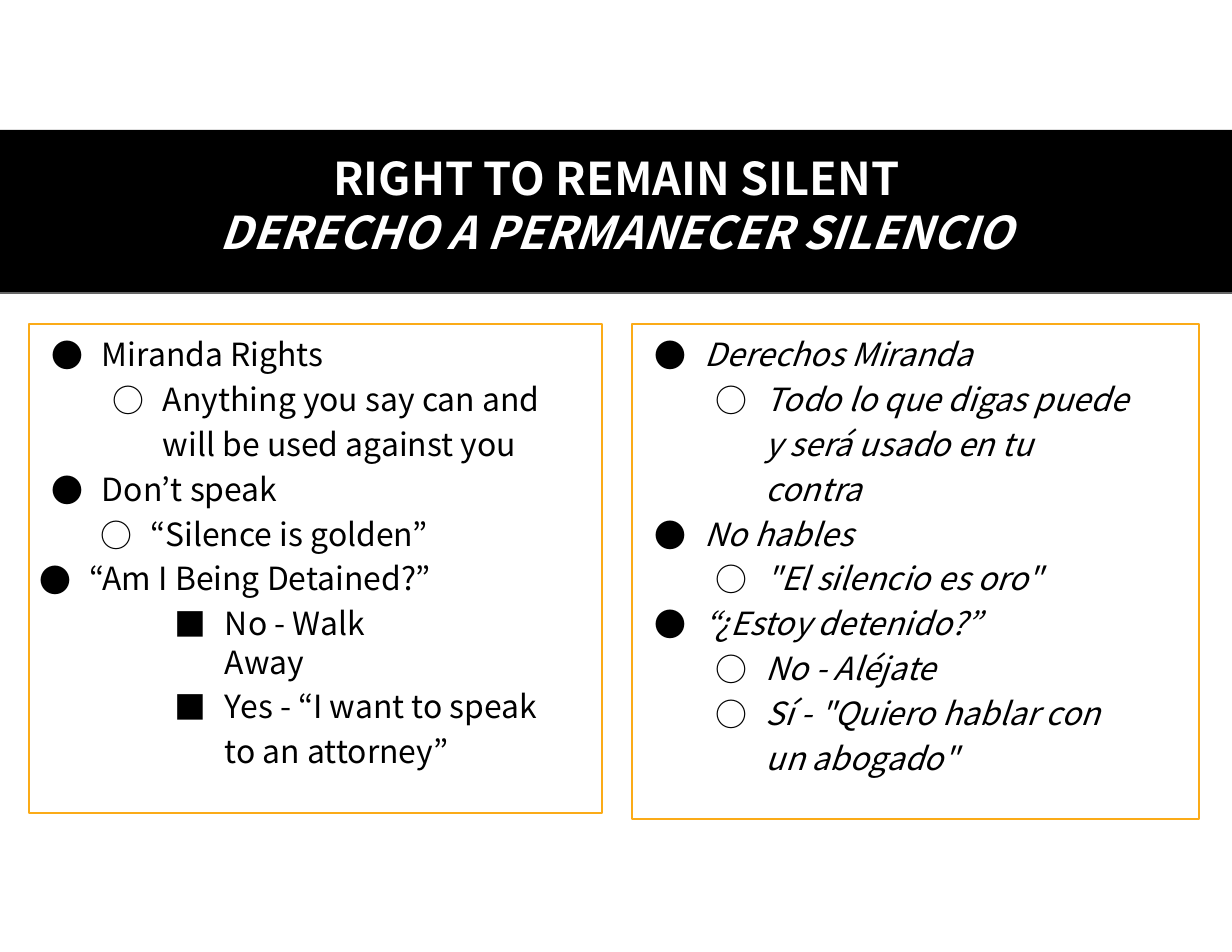
from lxml.etree import SubElement
from pptx import Presentation
from pptx.dml.color import RGBColor
from pptx.enum.shapes import MSO_CONNECTOR, MSO_SHAPE
from pptx.enum.text import MSO_ANCHOR, PP_ALIGN
from pptx.oxml.ns import qn
from pptx.util import Pt

PX = 914400 // 112
FONT = "Noto Sans CJK JP"
BLACK, WHITE, GRAY, ORANGE = "000000", "FFFFFF", "666666", "FBAB18"
HANGING = 50
LEFT, CENTER, RIGHT = PP_ALIGN.LEFT, PP_ALIGN.CENTER, PP_ALIGN.RIGHT

# Each level: bullet and text indent in px
LEVELS = {1: ("●", 73), 2: ("○", 134), 3: ("■", 196)}

# Each item: level, text, format
ENGLISH = [
    (1, "Miranda Rights", dict(before=7)),
    (2, "Anything you say can and will be used against you",
     dict(before=0.1, spacing=1.17, right=50)),
    (1, "Don’t speak", {}),
    (2, "“Silence is golden”", dict(align=RIGHT, indent=HANGING, right=174)),
    (1, "“Am I Being Detained?”", dict(align=RIGHT, indent=HANGING, right=171)),
    (3, "No - Walk Away", dict(right=180)),
    (3, "Yes - “I want to speak to an attorney”",
     dict(before=0, spacing=1.17, right=50)),
]
SPANISH = [
    (1, "Derechos Miranda", dict(before=7)),
    (2, "Todo lo que digas puede y será usado en tu contra",
     dict(before=0.1, spacing=1.17, right=64)),
    (1, "No hables", {}),
    (2, '"El silencio es oro"', {}),
    (1, "“¿Estoy detenido?”", {}),
    (2, "No - Aléjate", {}),
    (2, 'Sí - "Quiero hablar con un abogado"',
     dict(before=0, spacing=1.17, right=64)),
]


def color(hex_string):
    return RGBColor.from_string(hex_string)


def scaled(*lengths):
    return [length * PX for length in lengths]


def prepare_frame(shape):
    frame = shape.text_frame
    frame.word_wrap = True
    frame.vertical_anchor = MSO_ANCHOR.TOP
    frame.margin_left = frame.margin_right = frame.margin_bottom = 0
    frame.margin_top = 11 * PX
    return frame


def add_text(frame, text, *, size, ink=BLACK, bold=False, italic=False,
             align=LEFT, before=0, spacing=None):
    """Fill the frame's empty first paragraph, or add one after the others."""
    paragraph = frame.paragraphs[-1]
    if paragraph.runs:
        paragraph = frame.add_paragraph()
    paragraph.alignment = align
    paragraph.space_before = Pt(before)
    if spacing:
        paragraph.line_spacing = spacing
    run = paragraph.add_run()
    run.text = text
    font = run.font
    font.name, font.size = FONT, Pt(size)
    font.bold, font.italic = bold, italic
    font.color.rgb = color(ink)
    return paragraph


def set_bullet(paragraph, bullet, indent, right):
    properties = paragraph._p.get_or_add_pPr()
    properties.set("marL", str(indent * PX))
    properties.set("marR", str(right * PX))
    properties.set("indent", str(-HANGING * PX))
    SubElement(properties, qn("a:buFont"), typeface=FONT)
    SubElement(properties, qn("a:buChar"), char=bullet)


def add_box(slide, box, fill=None, line=None):
    shape = slide.shapes.add_shape(MSO_SHAPE.RECTANGLE, *scaled(*box))
    shape.shadow.inherit = False
    if fill:
        shape.fill.solid()
        shape.fill.fore_color.rgb = color(fill)
    else:
        shape.fill.background()
    if line:
        shape.line.color.rgb = color(line)
        shape.line.width = Pt(1.65)
    else:
        shape.line.fill.background()
    return shape


def add_title_band(slide, box):
    left, top, width, height = box
    add_box(slide, box, fill=BLACK)
    bottom = top + height
    rule = slide.shapes.add_connector(
        MSO_CONNECTOR.STRAIGHT, *scaled(left + width, bottom, left, bottom))
    rule.line.color.rgb = color(GRAY)
    rule.line.width = Pt(0.82)
    SubElement(rule._element.spPr, qn("a:effectLst"))

    title = slide.shapes.add_textbox(*scaled(left + 66, top + 9, width - 131, 121))
    frame = prepare_frame(title)
    style = dict(size=29, ink=WHITE, bold=True, align=CENTER)
    add_text(frame, "RIGHT TO REMAIN SILENT", before=1.4, **style)
    add_text(frame, "DERECHO A PERMANECER SILENCIO", before=0.5, italic=True, **style)


def add_rights_panel(slide, box, items, italic=False):
    frame = prepare_frame(add_box(slide, box, line=ORANGE))
    for level, text, changes in items:
        bullet, indent = LEVELS[level]
        style = dict(before=4.2, indent=indent, right=0) | changes
        indent, right = style.pop("indent"), style.pop("right")
        paragraph = add_text(frame, text, size=20.5, italic=italic, **style)
        set_bullet(paragraph, bullet, indent, right)


def main():
    presentation = Presentation()
    presentation.slide_width, presentation.slide_height = scaled(1232, 952)
    slide = presentation.slides.add_slide(presentation.slide_layouts[6])
    add_title_band(slide, (0, 130, 1232, 163))
    add_rights_panel(slide, (29, 324, 573, 489), ENGLISH)
    add_rights_panel(slide, (632, 324, 567, 495), SPANISH, italic=True)
    presentation.save("out.pptx")


if __name__ == "__main__":
    main()
